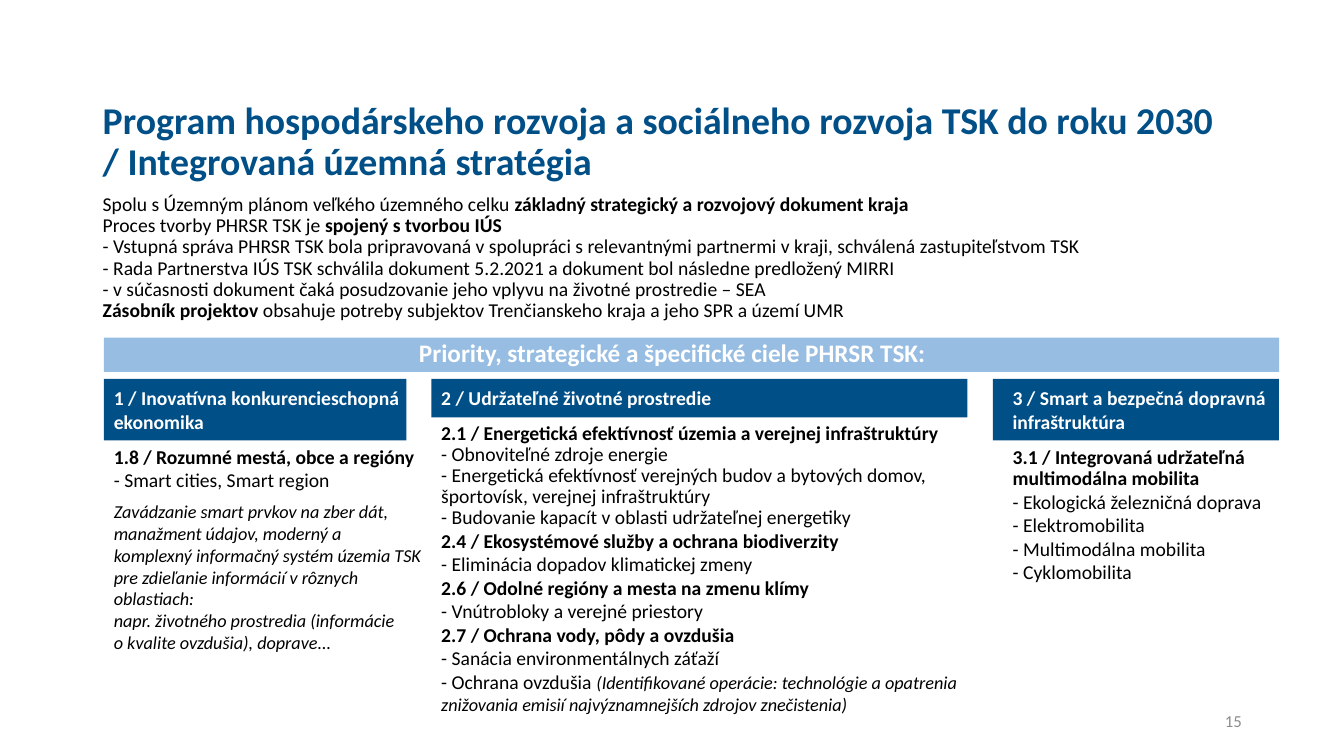
"""Build the slide on the regional development programme and its priorities."""
from dataclasses import dataclass

import pptx
import pptx.dml.color
import pptx.enum.shapes
import pptx.enum.text
import pptx.shapes.autoshape
import pptx.slide
import pptx.text.text
import pptx.util

Cm = pptx.util.Cm
Pt = pptx.util.Pt
Align = pptx.enum.text.PP_ALIGN
Anchor = pptx.enum.text.MSO_ANCHOR


@dataclass(frozen=True)
class Theme:
    font: str = "Calibri"
    navy: str = "004F87"
    sky: str = "97BDE2"
    black: str = "000000"
    white: str = "FFFFFF"
    grey: str = "8C8C8C"
    title: int = 27
    band: int = 18
    body: int = 14
    note: int = 13
    page: int = 12


THEME = Theme()


@dataclass(frozen=True)
class Box:
    left: float
    top: float
    width: float
    height: float


@dataclass(frozen=True)
class Run:
    text: str
    bold: bool = False
    ital: bool = False
    size: int = THEME.body
    color: str = THEME.black


@dataclass(frozen=True)
class Line:
    runs: tuple[Run, ...]
    space: float | pptx.util.Length | None = None
    before: int = 0


@dataclass(frozen=True)
class Column:
    head: Box
    text: Box
    lines: tuple[Line, ...]


def plain(text: str, space: float | pptx.util.Length | None = None) -> Line:
    return Line((Run(text),), space)


def strong(text: str, space: float | pptx.util.Length | None = None) -> Line:
    return Line((Run(text, bold=True),), space)


def label(text: str) -> Line:
    return Line((Run(text, bold=True, color=THEME.white),))


def note(text: str, before: int = 0) -> Line:
    return Line((Run(text, ital=True, size=THEME.note),), before=before)


def write(par: pptx.text.text._Paragraph, text: str, *, size: int, color: str,
          bold: bool = False, ital: bool = False) -> None:
    for index, part in enumerate(text.split("\n")):
        if index:
            par.add_line_break()
        run = par.add_run()
        run.text = part
        run.font.name = THEME.font
        run.font.size = Pt(size)
        run.font.bold = bold
        run.font.italic = ital
        run.font.color.rgb = pptx.dml.color.RGBColor.from_string(color)


def add_text(slide: pptx.slide.Slide, box: Box, lines: tuple[Line, ...],
             align: Align = Align.LEFT, anchor: Anchor = Anchor.TOP) -> None:
    frame = slide.shapes.add_textbox(
        Cm(box.left), Cm(box.top), Cm(box.width), Cm(box.height)).text_frame
    frame.word_wrap = True
    frame.vertical_anchor = anchor
    for index, line in enumerate(lines):
        par = frame.add_paragraph() if index else frame.paragraphs[0]
        par.alignment = align
        if line.space:
            par.line_spacing = line.space
        if line.before:
            par.space_before = Pt(line.before)
        for run in line.runs:
            write(par, run.text, size=run.size, color=run.color,
                  bold=run.bold, ital=run.ital)


def add_bar(slide: pptx.slide.Slide, box: Box, color: str) -> None:
    bar = slide.shapes.add_shape(
        pptx.enum.shapes.MSO_SHAPE.RECTANGLE,
        Cm(box.left), Cm(box.top), Cm(box.width), Cm(box.height))
    bar.shadow.inherit = False
    bar.fill.solid()
    bar.fill.fore_color.rgb = pptx.dml.color.RGBColor.from_string(color)
    bar.line.fill.background()


TITLE = Line((Run(
    "Program hospodárskeho rozvoja a sociálneho rozvoja TSK do roku 2030\n"
    "/ Integrovaná územná stratégia",
    bold=True, size=THEME.title, color=THEME.navy),), 0.9)
BAND = Line((Run("Priority, strategické a špecifické ciele PHRSR TSK:",
                 bold=True, size=THEME.band, color=THEME.white),), 0.9)
PAGE = Line((Run("15", size=THEME.page, color=THEME.grey),))

INTRO = (
    Line((Run("Spolu s Územným plánom veľkého územného celku "),
          Run("základný strategický a rozvojový dokument kraja", bold=True)), 0.9),
    Line((Run("Proces tvorby PHRSR TSK je "),
          Run("spojený s tvorbou IÚS", bold=True)), 0.9),
    plain("- Vstupná správa PHRSR TSK bola pripravovaná v spolupráci s relevantnými "
          "partnermi v kraji, schválená zastupiteľstvom TSK", 0.9),
    plain("- Rada Partnerstva IÚS TSK schválila dokument 5.2.2021 a dokument bol "
          "následne predložený MIRRI", 0.9),
    plain("- v súčasnosti dokument čaká posudzovanie jeho vplyvu na životné "
          "prostredie – SEA", 0.9),
    Line((Run("Zásobník projektov ", bold=True),
          Run("obsahuje potreby subjektov Trenčianskeho kraja a jeho SPR "
              "a území UMR")), 0.9),
)

COLUMNS = (
    Column(Box(2.62, 9.55, 7.62, 1.55), Box(2.62, 9.6, 8.26, 7.06), (
        label("1 / Inovatívna konkurencieschopná"),
        label("ekonomika"),
        strong("1.8 / Rozumné mestá, obce a regióny", 1.5),
        plain("- Smart cities, Smart region"),
        note("Zavádzanie smart prvkov na zber dát, manažment údajov, moderný a "
             "komplexný informačný systém územia TSK pre zdieľanie informácií "
             "v rôznych oblastiach:", before=6),
        note("napr. životného prostredia (informácie"),
        note("o kvalite ovzdušia), doprave..."),
    )),
    Column(Box(10.87, 9.55, 13.51, 0.97), Box(10.87, 9.6, 14.15, 8.64), (
        label("2 / Udržateľné životné prostredie"),
        strong("2.1 / Energetická efektívnosť územia a verejnej infraštruktúry", 1.5),
        plain("- Obnoviteľné zdroje energie", Pt(15)),
        plain("- Energetická efektívnosť verejných budov a bytových domov, "
              "športovísk, verejnej infraštruktúry", Pt(15)),
        plain("- Budovanie kapacít v oblasti udržateľnej energetiky", Pt(15)),
        strong("2.4 / Ekosystémové služby a ochrana biodiverzity"),
        plain("- Eliminácia dopadov klimatickej zmeny"),
        strong("2.6 / Odolné regióny a mesta na zmenu klímy"),
        plain("- Vnútrobloky a verejné priestory"),
        strong("2.7 / Ochrana vody, pôdy a ovzdušia"),
        plain("- Sanácia environmentálnych záťaží"),
        Line((Run("- Ochrana ovzdušia "),
              Run("(Identifikované operácie: technológie a opatrenia znižovania "
                  "emisií najvýznamnejších zdrojov znečistenia)",
                  ital=True, size=THEME.note))),
    )),
    Column(Box(25.02, 9.55, 7.21, 1.55), Box(25.27, 9.6, 7.95, 5.31), (
        label("3 / Smart a bezpečná dopravná infraštruktúra"),
        strong("3.1 / Integrovaná udržateľná", 1.5),
        strong("multimodálna mobilita", Pt(15)),
        plain("- Ekologická železničná doprava", Pt(17)),
        plain("- Elektromobilita"),
        plain("- Multimodálna mobilita"),
        plain("- Cyklomobilita"),
    )),
)


def main() -> None:
    deck = pptx.Presentation()
    deck.slide_width, deck.slide_height = Cm(33.87), Cm(19.05)
    slide = deck.slides.add_slide(deck.slide_layouts[6])
    add_text(slide, Box(2.34, 2.49, 29.21, 2.21), (TITLE,), anchor=Anchor.MIDDLE)
    add_text(slide, Box(2.34, 4.78, 29.21, 3.6), INTRO)
    add_bar(slide, Box(2.62, 8.51, 29.62, 0.86), THEME.sky)
    add_text(slide, Box(2.34, 8.51, 29.21, 0.86), (BAND,), Align.CENTER, Anchor.MIDDLE)
    for column in COLUMNS:
        add_bar(slide, column.head, THEME.navy)
        add_text(slide, column.text, column.lines)
    add_text(slide, Box(23.93, 17.65, 7.62, 1.02), (PAGE,), Align.RIGHT, Anchor.MIDDLE)
    deck.save("out.pptx")


if __name__ == "__main__":
    main()
